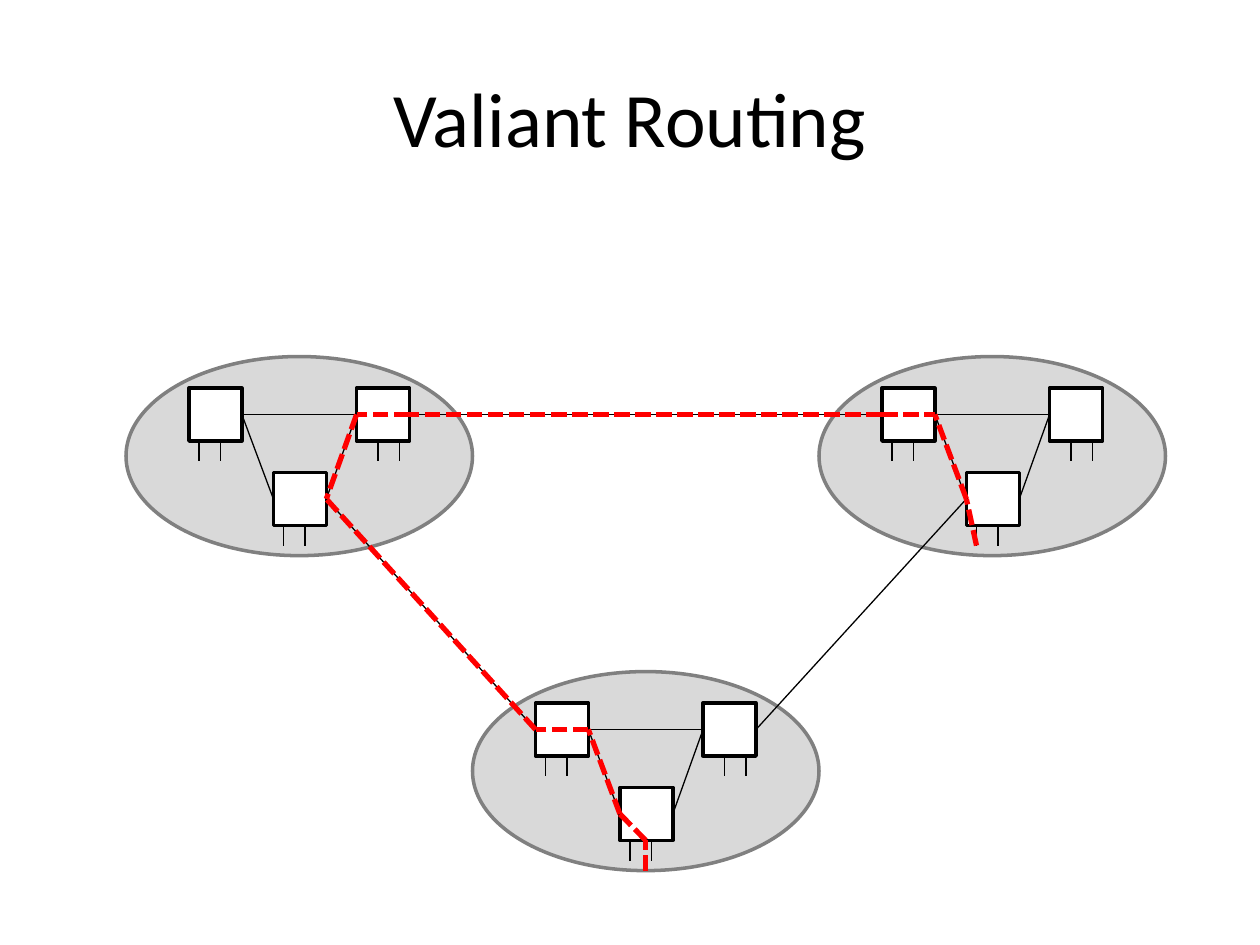
from lxml.etree import SubElement
from pptx import Presentation
from pptx.dml.color import RGBColor
from pptx.enum.dml import MSO_LINE
from pptx.enum.shapes import MSO_CONNECTOR, MSO_SHAPE
from pptx.enum.text import MSO_ANCHOR, PP_ALIGN
from pptx.oxml.ns import qn
from pptx.util import Inches, Pt

BLACK = RGBColor(0, 0, 0)
WHITE = RGBColor(255, 255, 255)
PALE = RGBColor(217, 217, 217)
GREY = RGBColor(128, 128, 128)
RED = RGBColor(255, 0, 0)

SIDE = 0.42
MID = 0.21
WIDE, HIGH = 2.75, 1.58
NODES = ((0.5, 0.25, 0.08), (1.17, 0.92, 0.08), (1.83, 0.25, 0.17))


def add_box(slide, kind, box, fill, edge):
    shape = slide.shapes.add_shape(kind, *map(Inches, box))
    shape.shadow.inherit = False
    shape.fill.solid()
    shape.fill.fore_color.rgb = fill
    shape.line.color.rgb = edge
    shape.line.width = Pt(2)


def add_line(slide, start, end, color=BLACK, width=0.75, dash=None):
    line = slide.shapes.add_connector(
        MSO_CONNECTOR.STRAIGHT, *map(Inches, (*start, *end)))
    line.line.color.rgb = color
    line.line.width = Pt(width)
    if dash:
        line.line.dash_style = dash
    SubElement(line._element.spPr, qn("a:effectLst"))


def add_title(slide, box, text):
    frame = slide.shapes.add_textbox(*map(Inches, box)).text_frame
    frame.word_wrap = True
    frame.vertical_anchor = MSO_ANCHOR.MIDDLE
    para = frame.paragraphs[0]
    para.alignment = PP_ALIGN.CENTER
    run = para.add_run()
    run.text = text
    run.font.name = "Calibri"
    run.font.size = Pt(44)
    run.font.color.rgb = BLACK


def get_ports(box):
    left, top = box[:2]
    ports = []
    for x, y, _ in NODES:
        mid = top + y + MID
        ports.append(((left + x, mid), (left + x + SIDE, mid)))
    return ports


def add_group(slide, box):
    left, top = box[:2]
    add_box(slide, MSO_SHAPE.OVAL, box, PALE, GREY)
    for x, y, _ in NODES:
        add_box(slide, MSO_SHAPE.RECTANGLE,
                (left + x, top + y, SIDE, SIDE), WHITE, BLACK)
    first, low, last = get_ports(box)
    add_line(slide, first[1], low[0])
    add_line(slide, last[0], low[1])
    add_line(slide, first[1], last[0])
    for x, y, inset in NODES:
        foot = top + y + SIDE
        for gap in (0, 0.17):
            pin = left + x + inset + gap
            add_line(slide, (pin, foot), (pin, foot + 0.16))


def add_links(slide, west, east, south):
    w, e, s = map(get_ports, (west, east, south))
    add_line(slide, w[1][1], s[0][0])
    add_line(slide, s[2][1], e[1][0])
    add_line(slide, e[0][0], w[2][1])


def add_route(slide, west, east, south):
    w, e, s = map(get_ports, (west, east, south))
    base = (south[0] + WIDE / 2, south[1] + HIGH)
    foot = (base[0], s[1][0][1] + MID)
    host = (east[0] + 1.25, east[1] + 1.5)
    hops = (
        (base, foot),
        (foot, s[1][0]),
        (host, e[1][0]),
        (s[1][0], s[0][1]),
        (s[0][1], s[0][0]),
        (s[0][0], w[1][1]),
        (w[2][0], w[1][1]),
        (w[2][1], w[2][0]),
        (e[0][0], w[2][1]),
        (e[0][0], e[0][1]),
        (e[1][0], e[0][1]),
    )
    for start, end in hops:
        add_line(slide, start, end, RED, 3, MSO_LINE.SQUARE_DOT)


def main():
    deck = Presentation()
    deck.slide_width, deck.slide_height = Inches(10), Inches(7.5)
    slide = deck.slides.add_slide(deck.slide_layouts[6])
    add_title(slide, (0.5, 0.3, 9, 1.25), "Valiant Routing")
    west = (1, 2.83, WIDE, HIGH)
    east = (6.5, 2.83, WIDE, HIGH)
    south = (3.75, 5.33, WIDE, HIGH)
    for box in (south, east, west):
        add_group(slide, box)
    add_links(slide, west, east, south)
    add_route(slide, west, east, south)
    deck.save("out.pptx")


if __name__ == "__main__":
    main()
